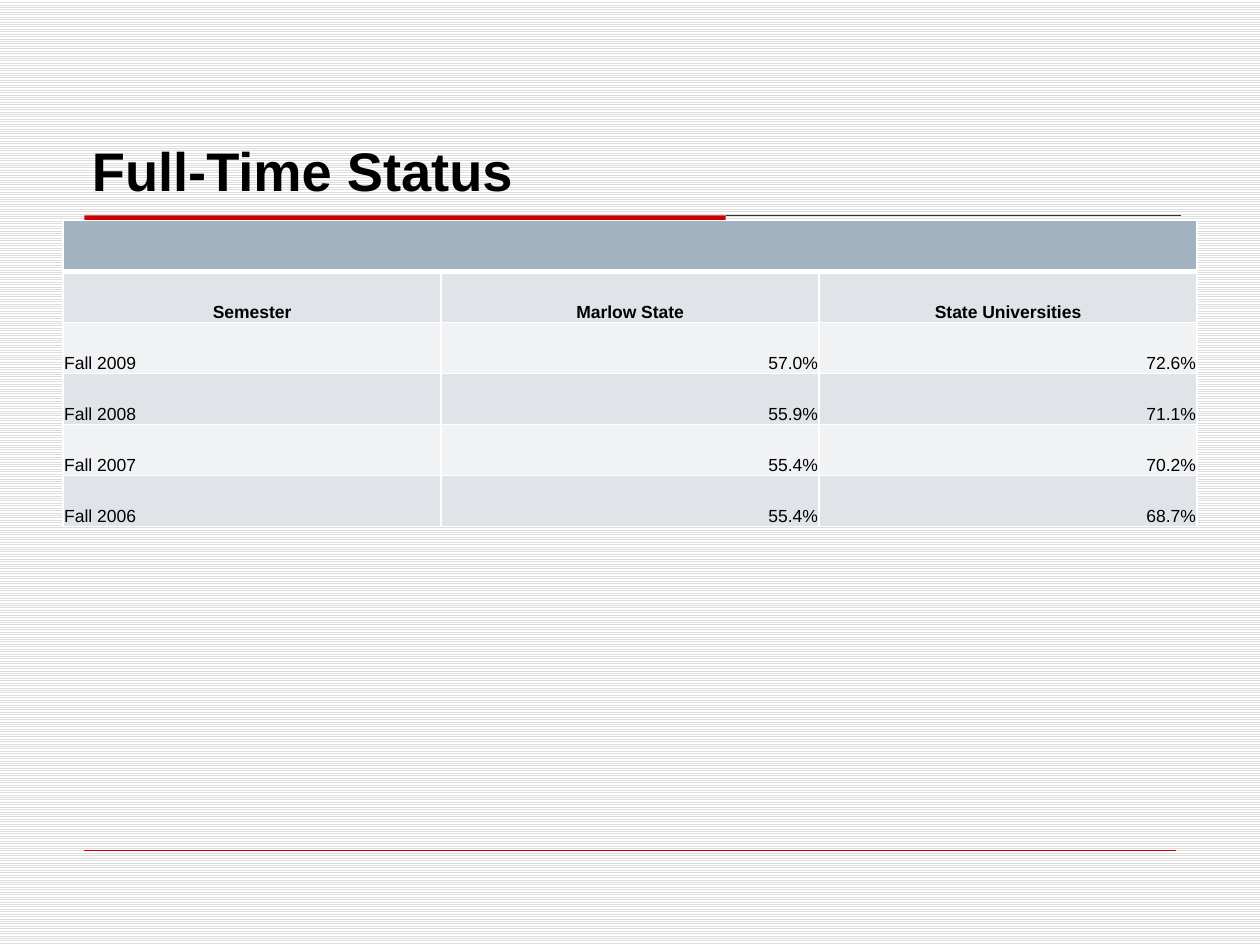
from pptx import Presentation
from pptx.dml.color import RGBColor
from pptx.enum.dml import MSO_PATTERN
from pptx.enum.shapes import MSO_CONNECTOR, MSO_SHAPE
from pptx.enum.text import MSO_ANCHOR, PP_ALIGN
from pptx.oxml.ns import qn
from pptx.util import Inches, Pt
from lxml.etree import SubElement

COLORS = {
    "text": "000000", "red": "CC0000", "rule": "333333",
    "stripe": "DDDDDD", "white": "FFFFFF",
    "header": "A3B2C1", "dark": "E0E4E9", "light": "F0F2F4",
}
ROWS = [
    ("Semester", "Marlow State", "State Universities"),
    ("Fall 2009", "57.0%", "72.6%"),
    ("Fall 2008", "55.9%", "71.1%"),
    ("Fall 2007", "55.4%", "70.2%"),
    ("Fall 2006", "55.4%", "68.7%"),
]


def rgb(name):
    return RGBColor.from_string(COLORS[name])


def add_run(p, text, size, bold):
    r = p.add_run()
    r.text = text
    r.font.name = "Arial"
    r.font.size = Pt(size)
    r.font.bold = bold
    r.font.color.rgb = rgb("text")


prs = Presentation()
prs.slide_width, prs.slide_height = Inches(10), Inches(7.5)
s = prs.slides.add_slide(prs.slide_layouts[5])
fill = s.background.fill
fill.patterned()
fill.pattern = MSO_PATTERN.LIGHT_HORIZONTAL
fill.fore_color.rgb = rgb("stripe")
fill.back_color.rgb = rgb("white")

bar = s.shapes.add_shape(MSO_SHAPE.RECTANGLE, Inches(0.67), Inches(1.71), Inches(5.09), Inches(0.12))
bar.shadow.inherit = False
bar.fill.solid()
bar.fill.fore_color.rgb = rgb("red")
bar.line.fill.background()

for left, right, y, color, width in [
    (5.76, 9.37, 1.71, "rule", 0.75),
    (0.67, 9.33, 6.75, "red", 0.25),
]:
    line = s.shapes.add_connector(MSO_CONNECTOR.STRAIGHT, Inches(left), Inches(y), Inches(right), Inches(y))
    line.line.color.rgb = rgb(color)
    line.line.width = Pt(width)
    SubElement(line._element.spPr, qn("a:effectLst"))

title = s.shapes.title
title.left, title.top, title.width, title.height = Inches(0.63), Inches(0.33), Inches(8.75), Inches(1.33)
tf = title.text_frame
tf.vertical_anchor = MSO_ANCHOR.BOTTOM
p = tf.paragraphs[0]
p.alignment = PP_ALIGN.LEFT
add_run(p, "Full-Time Status", 31, True)

table = s.shapes.add_table(len(ROWS) + 1, 3, Inches(0.5), Inches(1.75), Inches(9), Inches(2.43)).table
for i, row in enumerate(table.rows):
    for j, cell in enumerate(row.cells):
        tcPr = cell._tc.get_or_add_tcPr()
        for side in "LRTB":
            heavy = (i, side) in [(0, "B"), (1, "T")]
            ln = SubElement(tcPr, qn(f"a:ln{side}"), w=str(Pt(3 if heavy else 1)))
            SubElement(SubElement(ln, qn("a:solidFill")), qn("a:srgbClr"), val=COLORS["white"])
        cell.fill.solid()
        cell.fill.fore_color.rgb = rgb("header" if i == 0 else "dark" if i % 2 else "light")
        if i == 0:
            continue
        cell.vertical_anchor = MSO_ANCHOR.BOTTOM
        cell.margin_left = cell.margin_right = cell.margin_top = Inches(0.01)
        cell.margin_bottom = 0
        p = cell.text_frame.paragraphs[0]
        p.alignment = PP_ALIGN.CENTER if i == 1 else PP_ALIGN.RIGHT if j else PP_ALIGN.LEFT
        add_run(p, ROWS[i - 1][j], 10, i == 1)
table.cell(0, 0).merge(table.cell(0, 2))

prs.save("out.pptx")
